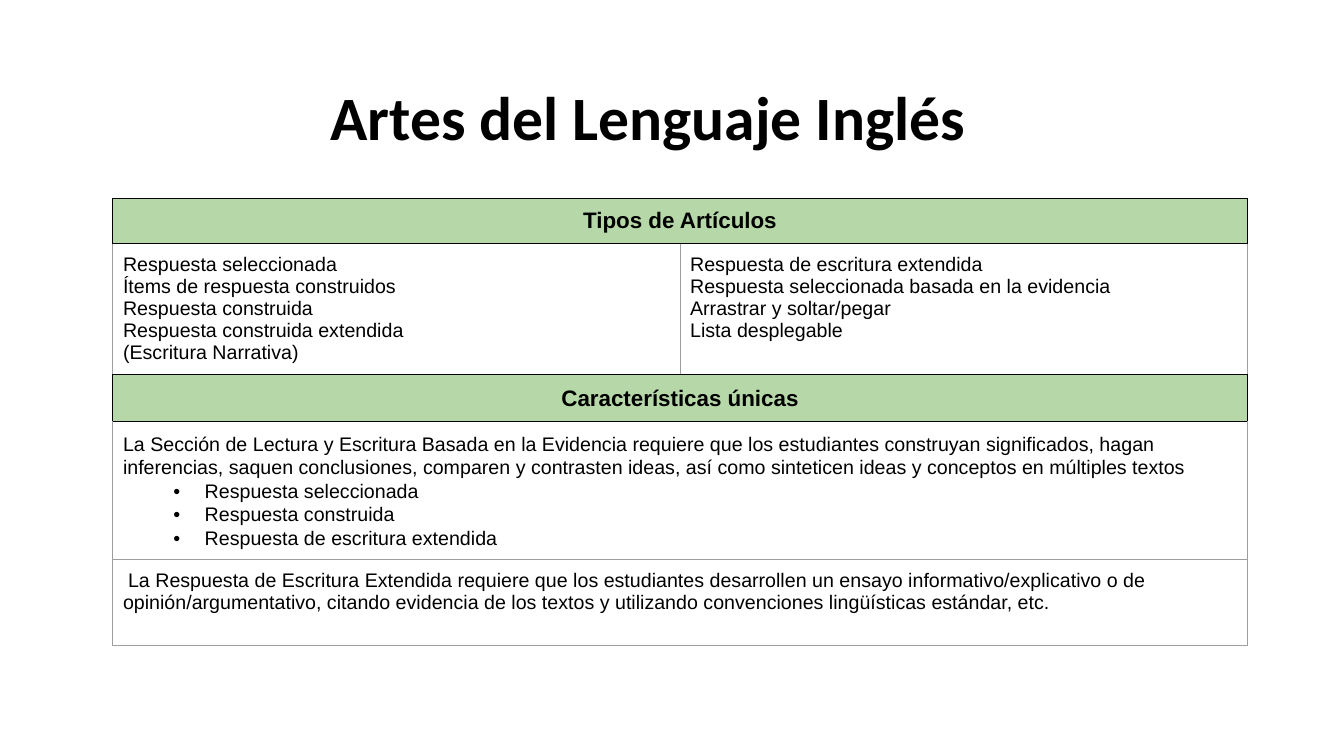
from lxml.etree import SubElement as Sub
from pptx import Presentation
from pptx.dml.color import RGBColor
from pptx.enum.text import MSO_ANCHOR as Anchor, PP_ALIGN as Align
from pptx.oxml.ns import qn
from pptx.util import Inches, Pt

BLACK = RGBColor(0x00, 0x00, 0x00)
GREEN = RGBColor(0xB6, 0xD7, 0xA8)
GRAY = RGBColor(0x9E, 0x9E, 0x9E)


def add_run(par, text, size, bold, font="Arial"):
    run = par.add_run()
    run.text = text
    run.font.name = font
    run.font.size = Pt(size)
    run.font.bold = bold
    run.font.color.rgb = BLACK


def set_edges(cell, colors):
    props = cell._tc.get_or_add_tcPr()
    for side, color in zip("LRTB", colors):
        line = Sub(props, qn(f"a:ln{side}"), w=str(Pt(0.75)))
        Sub(Sub(line, qn("a:solidFill")), qn("a:srgbClr"), val=str(color))


deck = Presentation()
deck.slide_width = Inches(13.33)
deck.slide_height = Inches(7.5)
slide = deck.slides.add_slide(deck.slide_layouts[5])

# Title
title = slide.shapes.title
title.left, title.top = Inches(0.68), Inches(0.47)
title.width, title.height = Inches(11.5), Inches(1.45)
title.text_frame.vertical_anchor = Anchor.MIDDLE
head = title.text_frame.paragraphs[0]
head.alignment = Align.CENTER
head.line_spacing = 0.9
add_run(head, "Artes del Lenguaje Inglés", 44, True, "Calibri")

# Rows: height, line spacing, header or not, lines of each cell ("•" marks a bullet)
rows = [
    (0.45, 1, True, [["Tipos de Artículos"]]),
    (1.29, 1, False, [
        ["Respuesta seleccionada", "Ítems de respuesta construidos",
         "Respuesta construida", "Respuesta construida extendida",
         "(Escritura Narrativa)"],
        ["Respuesta de escritura extendida",
         "Respuesta seleccionada basada en la evidencia",
         "Arrastrar y soltar/pegar", "Lista desplegable"]]),
    (0.47, 1.07, True, [["Características únicas"]]),
    (1.37, 1.07, False, [
        ["La Sección de Lectura y Escritura Basada en la Evidencia requiere "
         "que los estudiantes construyan significados, hagan inferencias, "
         "saquen conclusiones, comparen y contrasten ideas, así como "
         "sinteticen ideas y conceptos en múltiples textos",
         "•Respuesta seleccionada", "•Respuesta construida",
         "•Respuesta de escritura extendida"]]),
    (0.85, 1, False, [
        ["La Respuesta de Escritura Extendida requiere que los estudiantes "
         "desarrollen un ensayo informativo/explicativo o de "
         "opinión/argumentativo, citando evidencia de los textos y "
         "utilizando convenciones lingüísticas estándar, etc."]]),
]

# Table grid
total = sum(row[0] for row in rows)
table = slide.shapes.add_table(len(rows), 2, Inches(1.12), Inches(1.97),
                               Inches(11.25), Inches(total)).table
table.first_row = table.horz_banding = False

# Cells
for r, (height, space, header, texts) in enumerate(rows):
    table.rows[r].height = Inches(height)
    above = BLACK if header or (r and rows[r - 1][2]) else GRAY
    below = BLACK if header or (r + 1 < len(rows) and rows[r + 1][2]) else GRAY
    side = BLACK if header else GRAY
    for c in range(2):
        cell = table.cell(r, c)
        set_edges(cell, (side, side, above, below))
        if header:
            cell.fill.solid()
            cell.fill.fore_color.rgb = GREEN
        else:
            cell.fill.background()
        cell.margin_left = cell.margin_right = Inches(0.1)
        cell.margin_top = cell.margin_bottom = Inches(0.1)
    if len(texts) == 1:
        table.cell(r, 0).merge(table.cell(r, 1))

    for c, lines in enumerate(texts):
        frame = table.cell(r, c).text_frame
        for i, line in enumerate(lines):
            par = frame.add_paragraph() if i else frame.paragraphs[0]
            par.line_spacing = space
            par.alignment = Align.CENTER if header else Align.LEFT
            if line.startswith("•"):
                par.level = 1
                props = par._p.get_or_add_pPr()
                props.set("marL", str(Inches(0.81)))
                props.set("indent", str(Inches(-0.31)))
                Sub(Sub(props, qn("a:buClr")), qn("a:srgbClr"), val=str(BLACK))
                Sub(props, qn("a:buFont"), typeface="Arial")
                Sub(props, qn("a:buChar"), char="•")
            add_run(par, line.lstrip("•"), 16 if header else 14, header)

# Slight first-line indent in the last row
last = table.cell(len(rows) - 1, 0).text_frame.paragraphs[0]
last._p.get_or_add_pPr().set("indent", str(Inches(0.05)))

deck.save("out.pptx")
